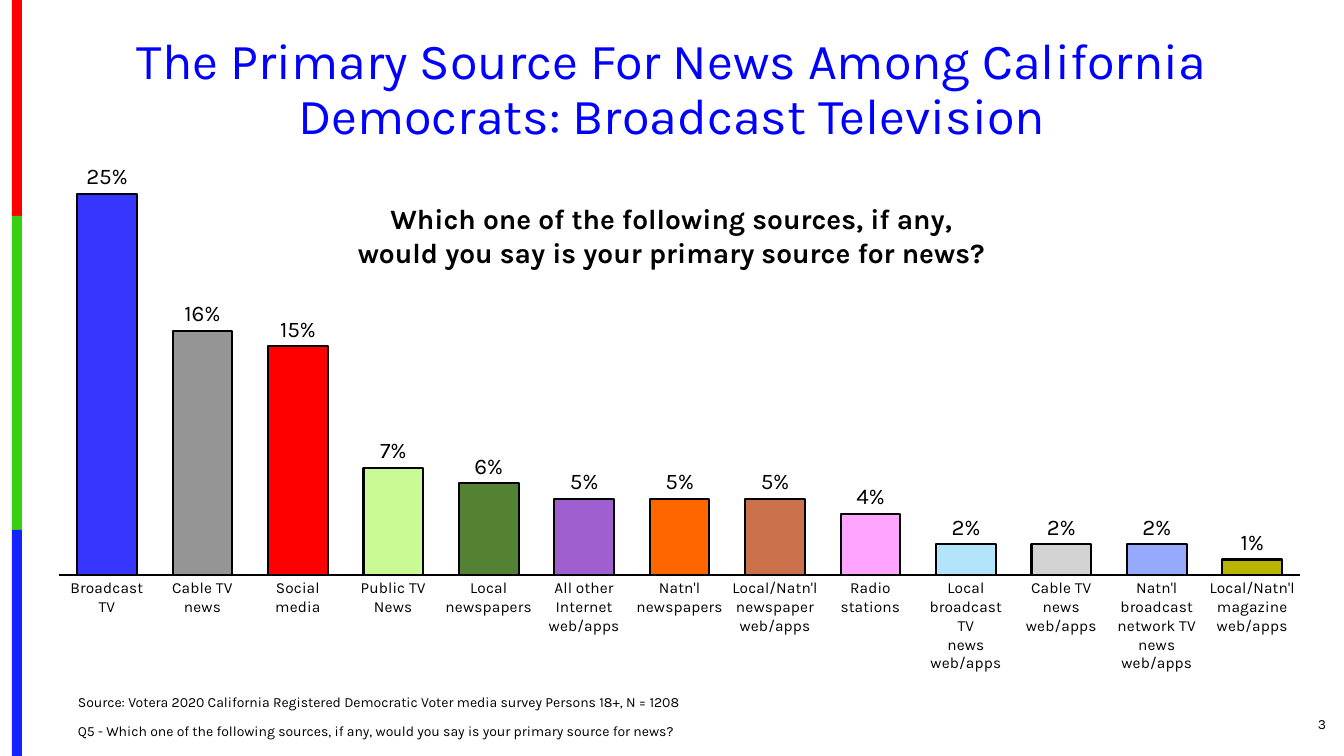
from lxml import etree
from pptx import Presentation
from pptx import util as u
from pptx.chart.data import CategoryChartData
from pptx.dml.color import RGBColor
from pptx.enum import chart as ch, shapes, text
from pptx.oxml import parse_xml

PX = 12192000 / 1344
FONT = "Karla"
BLACK = "000000"
CHART_NS = "http://schemas.openxmlformats.org/drawingml/2006/chart"

STRIPES = [("FE0000", 216), ("36CF12", 314), ("1322FE", 226)]
SOURCES = [
    ("Broadcast\nTV", 0.25, "3636FF"),
    ("Cable TV\nnews", 0.16, "959595"),
    ("Social\nmedia", 0.15, "FF0000"),
    ("Public TV\nNews", 0.07, "CAFA96"),
    ("Local newspapers", 0.06, "548235"),
    ("All other Internet web/apps", 0.05, "9F5FCF"),
    ("Natn'l newspapers", 0.05, "FF6600"),
    ("Local/Natn'l newspaper web/apps", 0.05, "CA704B"),
    ("Radio\nstations", 0.04, "FFA4FF"),
    ("Local\nbroadcast TV\nnews\nweb/apps", 0.02, "B2E5FC"),
    ("Cable TV\nnews\nweb/apps", 0.02, "D3D3D3"),
    ("Natn'l broadcast network TV news web/apps", 0.02, "95A9FD"),
    ("Local/Natn'l magazine web/apps", 0.01, "B8B400"),
]


def px(n):
    return u.Emu(round(n * PX))


def color(hex_code):
    return RGBColor.from_string(hex_code)


def style_font(font, size, hex_code=BLACK, bold=False):
    font.name = FONT
    font.size = u.Pt(size)
    font.bold = bold
    font.color.rgb = color(hex_code)


def outline(line):
    line.color.rgb = color(BLACK)
    line.width = u.Pt(1.5)


def write(frame, lines, size, hex_code=BLACK, bold=False, align=text.PP_ALIGN.LEFT,
          anchor=text.MSO_ANCHOR.TOP, spacing=1.0, gap=0):
    frame.text = "\n".join(lines)
    frame.word_wrap = True
    frame.auto_size = text.MSO_AUTO_SIZE.NONE
    frame.vertical_anchor = anchor
    for i, paragraph in enumerate(frame.paragraphs):
        paragraph.alignment = align
        paragraph.line_spacing = spacing
        paragraph.space_before = u.Pt(gap if i else 0)
        for run in paragraph.runs:
            style_font(run.font, size, hex_code, bold)


def add_text(slide, box, lines, size, **style):
    frame = slide.shapes.add_textbox(*map(px, box)).text_frame
    write(frame, lines, size, **style)


def add_title(slide, box, headline):
    title = slide.shapes.title
    title.left, title.top, title.width, title.height = map(px, box)
    write(title.text_frame, [headline], 36, "0000FF", align=text.PP_ALIGN.CENTER, spacing=0.9)


def add_side_stripes(slide, box):
    left, top, width, _ = box
    for hex_code, height in STRIPES:
        stripe = slide.shapes.add_shape(
            shapes.MSO_SHAPE.RECTANGLE, *map(px, (left, top, width, height)))
        stripe.shadow.inherit = False
        stripe.fill.solid()
        stripe.fill.fore_color.rgb = color(hex_code)
        stripe.line.fill.background()
        top += height


def set_plot_layout(chart, x, y, w, h):
    plot_area = chart._chartSpace.chart.plotArea
    for old in plot_area.findall(f"{{{CHART_NS}}}layout"):
        plot_area.remove(old)
    layout = etree.Element(f"{{{CHART_NS}}}layout")
    manual = etree.SubElement(layout, f"{{{CHART_NS}}}manualLayout")
    for tag, value in [("layoutTarget", "inner"), ("xMode", "edge"), ("yMode", "edge"),
                       ("x", x), ("y", y), ("w", w), ("h", h)]:
        etree.SubElement(manual, f"{{{CHART_NS}}}{tag}").set("val", str(value))
    plot_area.insert(0, parse_xml(etree.tostring(layout)))


def add_source_chart(slide, box):
    data = CategoryChartData(number_format="0%")
    data.categories = [label for label, _, _ in SOURCES]
    data.add_series("Series 1", [share for _, share, _ in SOURCES])
    chart = slide.shapes.add_chart(
        ch.XL_CHART_TYPE.COLUMN_CLUSTERED, *map(px, box), data).chart
    chart.has_title = False
    chart.has_legend = False
    style_font(chart.font, 10)
    set_plot_layout(chart, 0.001, 0.116, 0.991, 0.706)

    shares = chart.value_axis
    shares.minimum_scale, shares.maximum_scale = 0, 0.3
    shares.has_major_gridlines = False
    shares.visible = False

    outlets = chart.category_axis
    outlets.major_tick_mark = ch.XL_TICK_MARK.NONE
    outline(outlets.format.line)
    style_font(outlets.tick_labels.font, 11)

    plot = chart.plots[0]
    plot.gap_width = 60
    plot.vary_by_categories = False
    plot.has_data_labels = True
    labels = plot.data_labels
    labels.show_value = True
    labels.number_format = "0%"
    labels.number_format_is_linked = False
    labels.position = ch.XL_LABEL_POSITION.OUTSIDE_END
    style_font(labels.font, 16)

    for i, (_, _, hex_code) in enumerate(SOURCES):
        bar = plot.series[0].points[i].format
        bar.fill.solid()
        bar.fill.fore_color.rgb = color(hex_code)
        outline(bar.line)


def build_news_source_slide(prs):
    slide = prs.slides.add_slide(prs.slide_layouts[5])
    add_side_stripes(slide, (12, 0, 10, 756))
    add_source_chart(slide, (58, 43, 1252, 647))
    add_title(slide, (46, 31, 1252, 120),
              "The Primary Source For News Among California Democrats: Broadcast Television")
    add_text(slide, (1227, 704, 109, 40), ["3"], 10,
             align=text.PP_ALIGN.RIGHT, anchor=text.MSO_ANCHOR.MIDDLE)
    add_text(slide, (68, 690, 950, 55), [
        "Source: Votera 2020 California Registered Democratic Voter media survey Persons 18+, N = 1208",
        "Q5 - Which one of the following sources, if any, would you say is your primary source for news?",
    ], 10, anchor=text.MSO_ANCHOR.BOTTOM, spacing=0.9, gap=10)
    add_text(slide, (310, 197, 723, 78), [
        "Which one of the following sources, if any,",
        "would you say is your primary source for news?",
    ], 20, bold=True, align=text.PP_ALIGN.CENTER)


def main():
    prs = Presentation()
    prs.slide_width, prs.slide_height = px(1344), px(756)
    build_news_source_slide(prs)
    prs.save("out.pptx")


if __name__ == "__main__":
    main()
